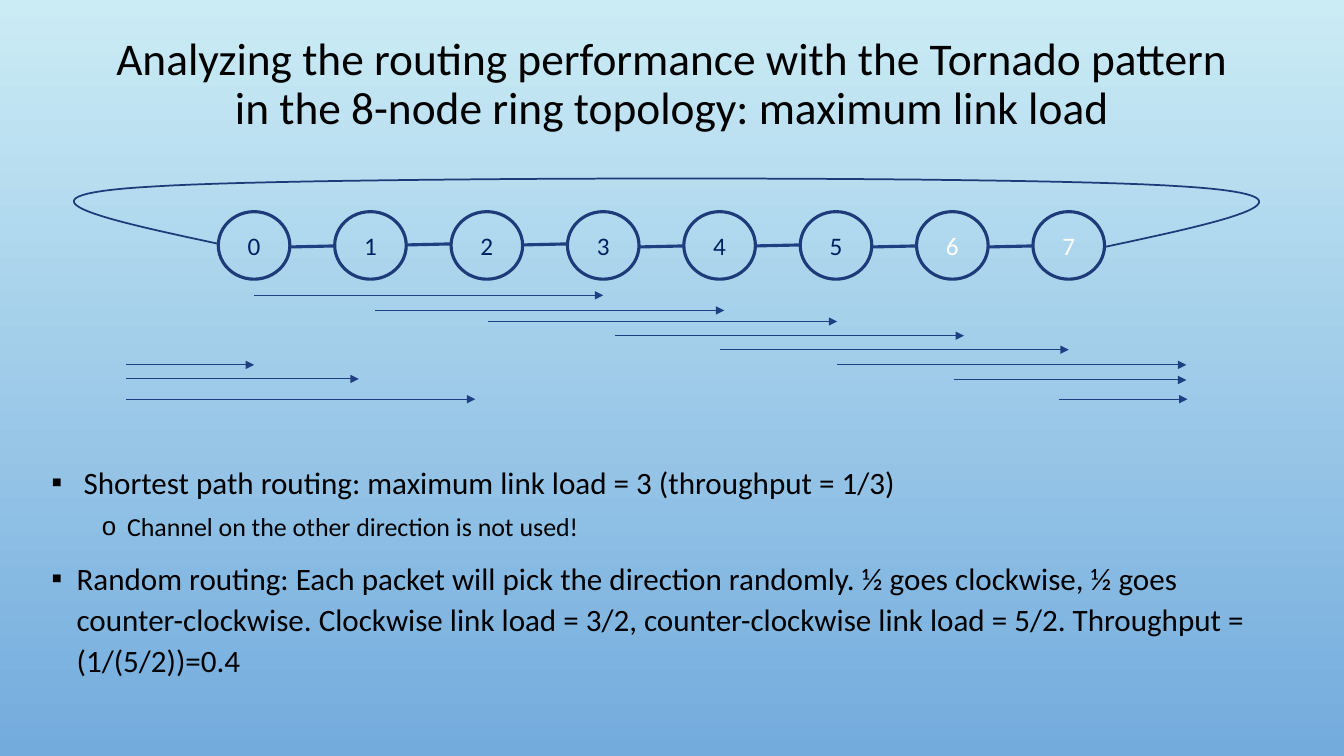
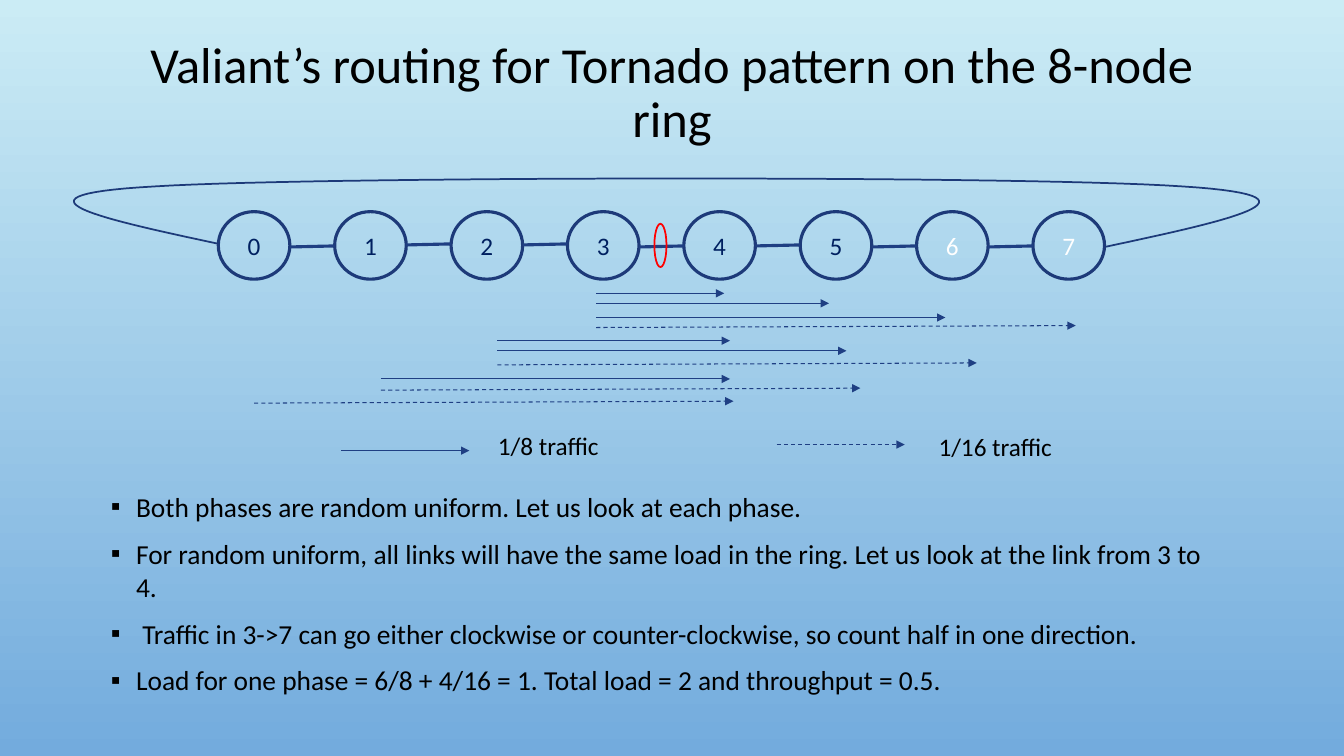
from lxml import etree
from pptx import Presentation, util as u
from pptx.dml import color
from pptx.enum import dml, shapes, text
from pptx.oxml import ns

COLORS = {"sky": "CBECF5", "sea": "73ABDD", "ring": "1D3A79", "link": "1F3F83",
          "label": "002060", "white": "FFFFFF", "black": "000000", "mark": "FF0000"}
RGB = {name: color.RGBColor.from_string(value) for name, value in COLORS.items()}
FONT = "Calibri"
NODES = 8
FIRST_CENTER, LAST_CENTER = 2.52, 10.6
COLUMN = (LAST_CENTER - FIRST_CENTER) / (NODES - 1)
FIRST_ROW, ROW = 2.93, 0.15
NODE_WIDTH, NODE_HEIGHT, NODE_TOP = 0.71, 0.67, 2.1
LINK_HEIGHTS = [2.45, 2.43, 2.43, 2.45, 2.44, 2.45, 2.45]
WRAP_START = (10.96, 2.45)
WRAP_CURVES = [((12.13, 2.2), (13.3, 1.95), (11.73, 1.85)),
               ((10.15, 1.74), (3.12, 1.75), (1.53, 1.85)),
               ((-0.07, 1.94), (1.05, 2.18), (2.17, 2.42))]
CURVE_STEPS = 30

SLIDES = [
    {"title": "Analyzing the routing performance with the Tornado pattern in the 8-node ring topology: maximum link load",
     "title_size": 32.4, "title_height": 1.05,
     "body_box": (0.41, 4.51, 12.08, 2.31), "sizes": (22.2, 18.5), "spacing": 1.1,
     "bullets": [
         (0, " Shortest path routing: maximum link load = 3 (throughput = 1/3)"),
         (1, "Channel on the other direction is not used!"),
         (0, "Random routing: Each packet will pick the direction randomly. ½ goes clockwise, ½ goes counter-clockwise. Clockwise link load = 3/2, counter-clockwise link load = 5/2. Throughput = (1/(5/2))=0.4")],
     "solid": [(0, 3, 0), (1.04, 3, 1), (2.01, 3, 1.73), (3.1, 3, 2.67), (4, 3, 3.6),
               (5.01, 3, 4.6), (6.01, 2, 5.6), (6.92, 1.1, 6.87),
               (-1.1, 3, 6.87), (-1.1, 2, 5.53), (-1.1, 1.1, 4.6)],
     "dashed": [], "legend": [], "marks": []},
    {"title": "Valiant’s routing for Tornado pattern on the 8-node ring",
     "title_size": 36, "title_height": 1.23,
     "body_box": (1, 4.81, 11.23, 2.25), "sizes": (19.6,), "spacing": 1.0,
     "bullets": [
         (0, "Both phases are random uniform. Let us look at each phase."),
         (0, "For random uniform, all links will have the same load in the ring. Let us look at the link from 3 to 4."),
         (0, " Traffic in 3->7 can go either clockwise or counter-clockwise, so count half in one direction."),
         (0, "Load for one phase = 6/8 + 4/16 = 1. Total load = 2 and throughput = 0.5.")],
     "solid": [(2.94, 1.1, -0.13), (2.94, 2, 0.53), (2.94, 3, 1.47), (2.09, 2, 3),
               (2.09, 3, 3.67), (1.09, 3, 5.53), (0.75, 1.1, 10.27)],
     "dashed": [(2.94, 4.12, 2.13, 0.13), (2.09, 4.12, 4.6, 0.13),
                (1.09, 4.12, 6.27, 0.13), (0, 4.12, 7.13, 0.13), (4.49, 1.1, 9.87, 0)],
     "legend": [("1/8 traffic", 4.84, 4.22, 1.28), ("1/16 traffic", 9.21, 4.23, 1.42)],
     "marks": [(6.49, 2.22, 0.12, 0.43)]},
]


def add_line(slide, start, end, width, arrow=False, dashed=False):
    line = slide.shapes.add_connector(
        shapes.MSO_CONNECTOR.STRAIGHT, *(u.Inches(value) for value in (*start, *end)))
    line.line.color.rgb = RGB["link"]
    line.line.width = u.Pt(width)
    if dashed:
        line.line.dash_style = dml.MSO_LINE.DASH
    if arrow:
        etree.SubElement(line.line._get_or_add_ln(), ns.qn("a:tailEnd"), type="triangle")
    etree.SubElement(line._element.spPr, ns.qn("a:effectLst"))


def add_oval(slide, box, line_color, width):
    oval = slide.shapes.add_shape(shapes.MSO_SHAPE.OVAL, *(u.Inches(value) for value in box))
    oval.shadow.inherit = False
    oval.fill.background()
    oval.line.color.rgb = RGB[line_color]
    oval.line.width = u.Pt(width)
    return oval


presentation = Presentation()
presentation.slide_width, presentation.slide_height = u.Inches(13.33), u.Inches(7.5)
background = presentation.slide_master.background.fill
background.gradient()
background.gradient_angle = 270
for stop, name in zip(background.gradient_stops, ("sky", "sea")):
    stop.color.rgb = RGB[name]

for content in SLIDES:
    slide = presentation.slides.add_slide(presentation.slide_layouts[1])

    title, body = slide.placeholders
    title_box = (1, 0.32, 11.33, content["title_height"])
    for placeholder, box in ((title, title_box), (body, content["body_box"])):
        placeholder.left, placeholder.top, placeholder.width, placeholder.height = map(u.Inches, box)
        placeholder.text_frame.auto_size = text.MSO_AUTO_SIZE.NONE
    title.text_frame.text = content["title"]
    title.text_frame.vertical_anchor = text.MSO_ANCHOR.MIDDLE
    paragraph = title.text_frame.paragraphs[0]
    paragraph.alignment = text.PP_ALIGN.CENTER
    paragraph.line_spacing = 0.9
    paragraph.font.name = FONT
    paragraph.font.size = u.Pt(content["title_size"])
    paragraph.font.color.rgb = RGB["black"]

    body.text_frame.text = "\n".join(words for level, words in content["bullets"])
    for index, paragraph in enumerate(body.text_frame.paragraphs):
        level = content["bullets"][index][0]
        properties = paragraph._p.get_or_add_pPr()
        properties.set("marL", str(u.Inches(0.25 + 0.5 * level)))
        properties.set("indent", str(u.Inches(-0.25)))
        bullet_color = etree.SubElement(properties, ns.qn("a:buClr"))
        etree.SubElement(bullet_color, ns.qn("a:srgbClr"), val=COLORS["black"])
        etree.SubElement(properties, ns.qn("a:buChar"), char="▪o"[level])
        paragraph.level = level
        paragraph.line_spacing = content["spacing"]
        paragraph.space_before = u.Pt((10, 5)[level] if index else 0)
        paragraph.font.name = FONT
        paragraph.font.size = u.Pt(content["sizes"][level])
        paragraph.font.color.rgb = RGB["black"]

    for number in range(NODES):
        left = FIRST_CENTER - NODE_WIDTH / 2 + number * COLUMN
        node = add_oval(slide, (left, NODE_TOP, NODE_WIDTH, NODE_HEIGHT), "ring", 2.25)
        node.text_frame.text = str(number)
        node.text_frame.vertical_anchor = text.MSO_ANCHOR.MIDDLE
        paragraph = node.text_frame.paragraphs[0]
        paragraph.alignment = text.PP_ALIGN.CENTER
        paragraph.font.name = FONT
        paragraph.font.size = u.Pt(18)
        paragraph.font.color.rgb = RGB["label" if number < 6 else "white"]

    for number, height in enumerate(LINK_HEIGHTS):
        start = FIRST_CENTER + NODE_WIDTH / 2 + number * COLUMN
        add_line(slide, (start, height), (start + COLUMN - NODE_WIDTH, height - 0.01), 2.25)

    points, origin = [], WRAP_START
    for first, second, end in WRAP_CURVES:
        for step in range(1, CURVE_STEPS + 1):
            t = step / CURVE_STEPS
            points.append([u.Inches((1 - t) ** 3 * a + 3 * (1 - t) ** 2 * t * b
                                    + 3 * (1 - t) * t ** 2 * c + t ** 3 * d)
                           for a, b, c, d in zip(origin, first, second, end)])
        origin = end
    builder = slide.shapes.build_freeform(*map(u.Inches, WRAP_START))
    builder.add_line_segments(points, close=False)
    wrap_link = builder.convert_to_shape()
    wrap_link.shadow.inherit = False
    wrap_link.fill.background()
    wrap_link.line.color.rgb = RGB["ring"]
    wrap_link.line.width = u.Pt(1.25)

    routes = [(*route, 0, False) for route in content["solid"]]
    routes += [(*route, True) for route in content["dashed"]]
    for column, span, row, rise, dashed in routes:
        left, top = FIRST_CENTER + column * COLUMN, FIRST_ROW + row * ROW
        add_line(slide, (left, top), (left + span * COLUMN, top - rise * ROW), 0.75, True, dashed)

    for box in content["marks"]:
        add_oval(slide, box, "mark", 1.25)

    for words, left, top, width in content["legend"]:
        label = slide.shapes.add_textbox(*map(u.Inches, (left, top, width, 0.4)))
        label.text_frame.text = words
        label.text_frame.auto_size = text.MSO_AUTO_SIZE.SHAPE_TO_FIT_TEXT
        label.text_frame.word_wrap = False
        paragraph = label.text_frame.paragraphs[0]
        paragraph.font.name = FONT
        paragraph.font.size = u.Pt(18)
        paragraph.font.color.rgb = RGB["black"]

presentation.save("out.pptx")
